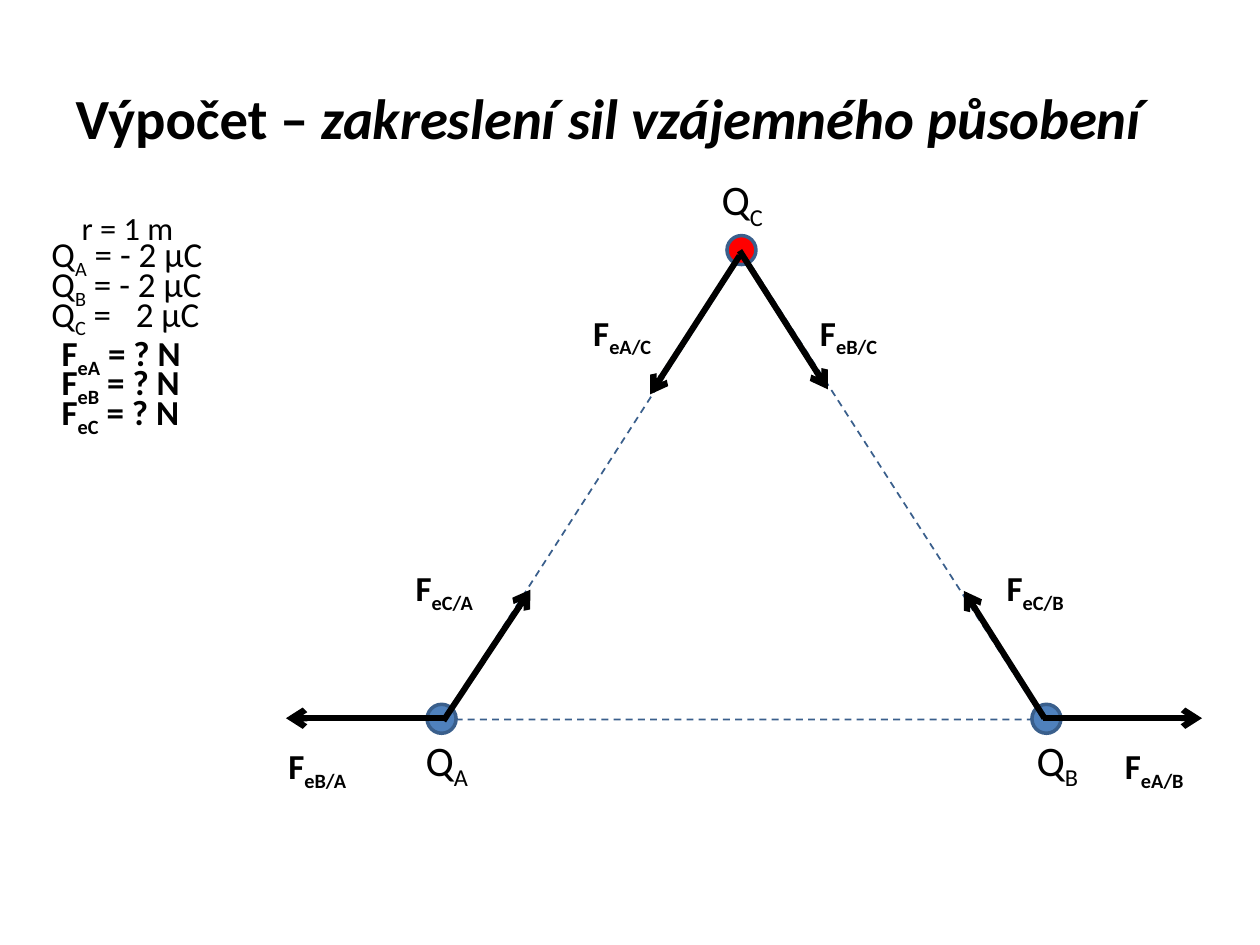
from lxml.etree import SubElement
from pptx import Presentation
from pptx.dml.color import RGBColor
from pptx.enum.dml import MSO_LINE
from pptx.enum.shapes import MSO_CONNECTOR, MSO_SHAPE
from pptx.enum.text import MSO_ANCHOR, PP_ALIGN
from pptx.oxml.ns import qn
from pptx.util import Inches, Pt

BLACK = RGBColor(0x00, 0x00, 0x00)
BLUE = RGBColor(0x4F, 0x81, 0xBD)
DARK_BLUE = RGBColor(0x3A, 0x5F, 0x8C)
RED = RGBColor(0xFF, 0x00, 0x00)
FONT = "Calibri"

prs = Presentation()
prs.slide_width, prs.slide_height = Inches(10), Inches(7.5)
COL = prs.slide_width / 100
ROW = prs.slide_height / 75


def box(x, y, w, h):
    """Turn grid columns and rows into slide lengths."""
    return int(x * COL), int(y * ROW), int(w * COL), int(h * ROW)


def add_runs(p, runs, size, bold=False):
    """Add (text, style) runs; style is "", "sub" or "italic"."""
    for text, style in runs:
        r = p.add_run()
        r.text = text
        r.font.name, r.font.size, r.font.bold = FONT, Pt(size), bold
        r.font.color.rgb = BLACK
        if style == "sub":
            r.font._element.set("baseline", "-25000")
        elif style == "italic":
            r.font.italic = True


s = prs.slides.add_slide(prs.slide_layouts[5])

# Title
title = s.shapes.title
title.left, title.top, title.width, title.height = box(5, 3, 90, 12.5)
tf = title.text_frame
tf.vertical_anchor = MSO_ANCHOR.MIDDLE
p = tf.paragraphs[0]
p.alignment = PP_ALIGN.LEFT
add_runs(p, [("Výpočet – ", ""), ("zakreslení sil vzájemného působení", "italic")], 32.4, True)

# Triangle with a charge at each corner
triangle = s.shapes.add_shape(MSO_SHAPE.ISOSCELES_TRIANGLE, *box(35.2, 20.1, 47.6, 37))
triangle.shadow.inherit = False
triangle.fill.background()
triangle.line.color.rgb = DARK_BLUE
triangle.line.width = Pt(1)
triangle.line.dash_style = MSO_LINE.DASH

DIAMETER = 2.3
for x, y, color in [(33.9, 55.9, BLUE), (81.9, 55.9, BLUE), (57.7, 18.7, RED)]:
    charge = s.shapes.add_shape(MSO_SHAPE.OVAL, *box(x, y, DIAMETER, DIAMETER))
    charge.shadow.inherit = False
    charge.fill.solid()
    charge.fill.fore_color.rgb = color
    charge.line.color.rgb = DARK_BLUE
    charge.line.width = Pt(2)

# Force arrows
forces = [
    (35.2, 57.2, 42.1, 46.8),
    (58.7, 20.3, 51.6, 31.3),
    (82.9, 57, 76.5, 46.9),
    (58.7, 19.9, 65.7, 30.9),
    (35.3, 57, 22.7, 57),
    (82.8, 57, 95.4, 57),
]
for ends in forces:
    arrow = s.shapes.add_connector(MSO_CONNECTOR.STRAIGHT, *box(*ends))
    arrow.line.color.rgb = BLACK
    arrow.line.width = Pt(3.5)
    SubElement(arrow.line._get_or_add_ln(), qn("a:tailEnd"), type="arrow")
    SubElement(arrow._element.spPr, qn("a:effectLst"))

# Texts: left, top, width, symbol, subscript, rest, size, bold
texts = [(5.5, 16.4, 27, "r = 1 m", "", "", 18.5, False)]
LINE = 2.35
for i, (name, value) in enumerate([("A", " = - 2 µC"), ("B", " = - 2 µC"), ("C", " =\t2 µC")]):
    texts.append((3.1, 18 + i * LINE, 27, "Q", name, value, 20, False))
    texts.append((3.9, 25.8 + i * LINE, 30.5, "F", "e" + name, " = ? N", 20, True))
for x, y, name in [(32.8, 57.8, "A"), (81.3, 57.8, "B"), (56.3, 13.3, "C")]:
    texts.append((x, y, 6.3, "Q", name, "", 24, False))
for x, y, w, name in [
    (21.9, 58.6, 9.4, "eB/A"),
    (88.3, 58.6, 9.4, "eA/B"),
    (78.9, 44.5, 9.4, "eC/B"),
    (64.1, 24.2, 9.4, "eB/C"),
    (46.1, 24.2, 11.7, "eA/C"),
    (32, 44.5, 10.2, "eC/A"),
]:
    texts.append((x, y, w, "F", name, "", 20, True))

for x, y, w, symbol, sub, rest, size, bold in texts:
    tf = s.shapes.add_textbox(*box(x, y, w, 7.4 if sub else 3.9)).text_frame
    tf.word_wrap = True
    p = tf.paragraphs[0]
    runs = [(symbol, ""), (sub, "sub"), (rest, "")]
    add_runs(p, [run for run in runs if run[0]], size, bold)
    if not sub:
        p.line_spacing = 0.9
    if "\t" in rest:
        tabs = SubElement(p._p.get_or_add_pPr(), qn("a:tabLst"))
        SubElement(tabs, qn("a:tab"), pos=str(Inches(0.67)), algn="l")

prs.save("out.pptx")
